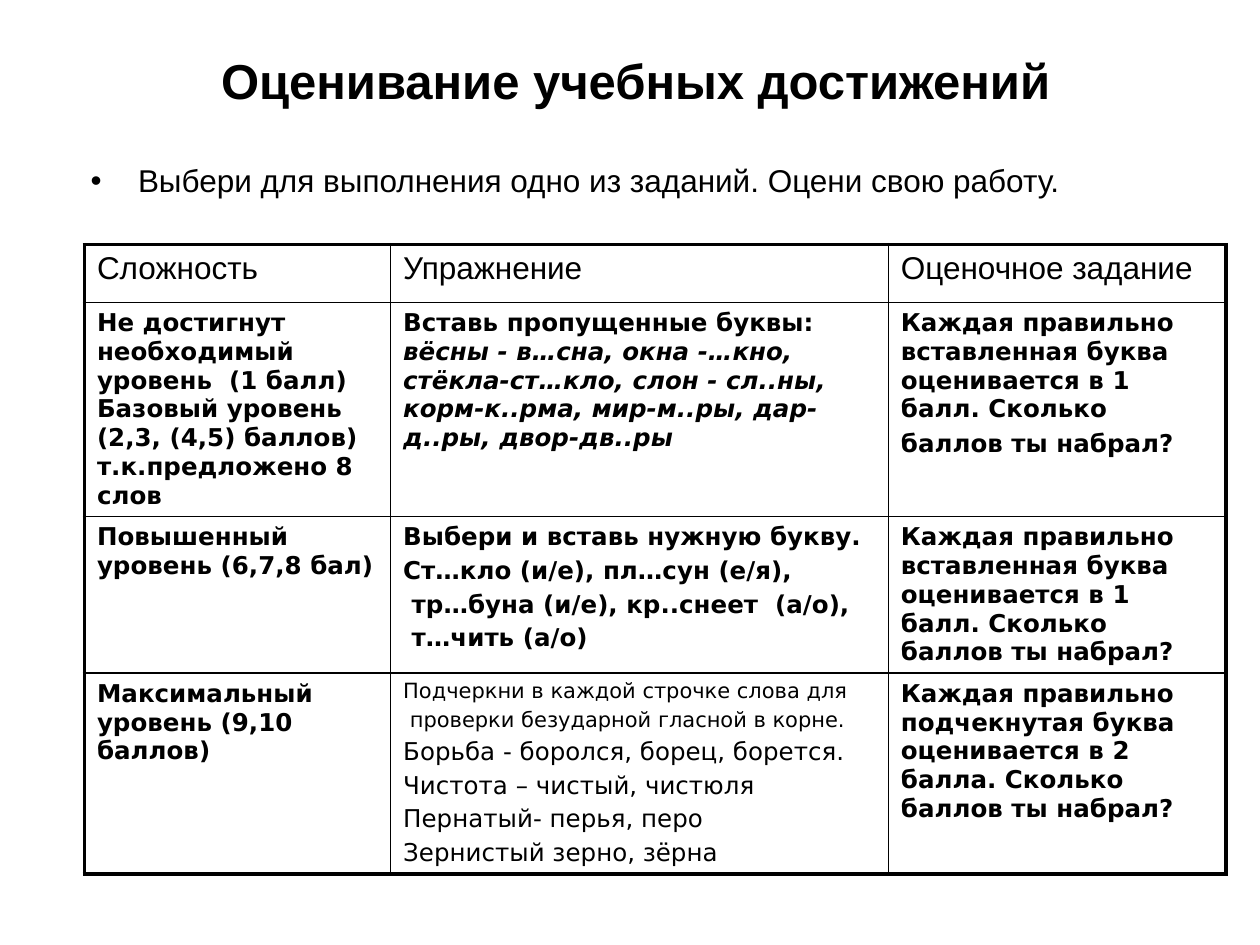
from lxml import etree
from pptx import Presentation
from pptx.dml.color import RGBColor
from pptx.enum.text import MSO_ANCHOR, MSO_AUTO_SIZE, PP_ALIGN
from pptx.oxml.ns import qn
from pptx.util import Inches, Pt

CENTER = PP_ALIGN.CENTER
MIDDLE = MSO_ANCHOR.MIDDLE
NO_AUTOFIT = MSO_AUTO_SIZE.NONE
BLACK = "000000"
OUTER, INNER = 2.25, 1

# style: font, size, bold, italic
STYLES = {
    "title": ("Arial", 28, True, False),
    "lead": ("Arial", 18, False, False),
    "bold": ("DejaVu Sans", 14, True, False),
    "example": ("DejaVu Sans", 14, True, True),
    "plain": ("DejaVu Sans", 14, False, False),
    "small": ("DejaVu Sans", 12, False, False),
    "gap": ("DejaVu Sans", 18, False, False),
}

TITLE = "Оценивание учебных достижений"
TASK = "Выбери для выполнения одно из заданий. Оцени свою работу."
SCORE = ("Каждая правильно вставленная буква оценивается в 1 балл. "
         "Сколько баллов ты набрал?")

# Each cell is a list of paragraphs, each paragraph a list of (text, style)
ROWS = [
    [[[(heading, "lead")]]
     for heading in ("Сложность", "Упражнение", "Оценочное задание")],
    [
        [[("Не достигнут необходимый уровень  (1 балл) Базовый уровень "
           "(2,3, (4,5) баллов) т.к.предложено 8 слов", "bold")]],
        [[("Вставь пропущенные буквы: ", "bold"),
          ("вёсны - в…сна, окна -…кно, стёкла-ст…кло, слон - сл..ны, "
           "корм-к..рма, мир-м..ры, дар-д..ры, двор-дв..ры", "example")]],
        [[(SCORE, "bold"), (" ", "gap")]],
    ],
    [
        [[("Повышенный уровень (6,7,8 бал)", "bold")]],
        [[("Выбери и вставь нужную букву.", "bold")],
         [("Ст…кло (и/е), пл…сун (е/я),", "bold")],
         [(" тр…буна (и/е), кр..снеет  (а/о),", "bold")],
         [(" т…чить (а/о)", "bold")]],
        [[(SCORE, "bold")]],
    ],
    [
        [[("Максимальный уровень (9,10 баллов)", "bold")]],
        [[("Подчеркни в каждой строчке слова для", "small")],
         [(" проверки безударной гласной в корне.", "small")],
         [("Борьба - боролся, борец, борется.", "plain")],
         [("Чистота – чистый, чистюля", "plain")],
         [("Пернатый- перья, перо", "plain")],
         [("Зернистый зерно, зёрна", "plain")]],
        [[("Каждая правильно подчекнутая буква оценивается в 2 балла. "
           "Сколько баллов ты набрал?", "bold")]],
    ],
]
COLUMN_WIDTHS = [2.43, 3.95, 2.68]
ROW_HEIGHTS = [0.46, 1.7, 1.24, 1.59]


def rgb(color):
    return RGBColor.from_string(color)


def format_font(font, style):
    font.name, size, font.bold, font.italic = STYLES[style]
    font.size = Pt(size)
    font.color.rgb = rgb(BLACK)


def fill_placeholder(shape, text, style, left, top, width, height):
    shape.left, shape.top = Inches(left), Inches(top)
    shape.width, shape.height = Inches(width), Inches(height)
    frame = shape.text_frame
    frame.text = text
    frame.auto_size = NO_AUTOFIT
    paragraph = frame.paragraphs[0]
    paragraph.space_before = Pt(0)
    format_font(paragraph.runs[0].font, style)
    return frame


def fill_cell(cell, paragraphs):
    frame = cell.text_frame
    for index, runs in enumerate(paragraphs):
        paragraph = frame.paragraphs[0] if index == 0 else frame.add_paragraph()
        size = STYLES[runs[0][1]][1]
        paragraph.space_before = Pt(0.2 * size if index else 0)
        for text, style in runs:
            run = paragraph.add_run()
            run.text = text
            format_font(run.font, style)


def set_borders(cell, widths):
    """Draw the cell's sides; widths are in points, keyed L, R, T, B."""
    properties = cell._tc.get_or_add_tcPr()
    for side, width in widths.items():
        line = etree.SubElement(properties, qn(f"a:ln{side}"), w=str(Pt(width)))
        fill = etree.SubElement(line, qn("a:solidFill"))
        etree.SubElement(fill, qn("a:srgbClr"), val=BLACK)


def add_levels_table(slide):
    last_row, last_column = len(ROWS) - 1, len(COLUMN_WIDTHS) - 1
    table = slide.shapes.add_table(
        len(ROWS), len(COLUMN_WIDTHS), Inches(0.67), Inches(1.94),
        Inches(sum(COLUMN_WIDTHS)), Inches(sum(ROW_HEIGHTS))).table
    table.first_row = table.horz_banding = False
    for column, width in zip(table.columns, COLUMN_WIDTHS):
        column.width = Inches(width)
    for row, height in zip(table.rows, ROW_HEIGHTS):
        row.height = Inches(height)
    for r, row in enumerate(ROWS):
        for c, paragraphs in enumerate(row):
            cell = table.cell(r, c)
            fill_cell(cell, paragraphs)
            set_borders(cell, {
                "L": OUTER if c == 0 else INNER,
                "R": OUTER if c == last_column else INNER,
                "T": OUTER if r == 0 else INNER,
                "B": OUTER if r == last_row else INNER,
            })
            cell.fill.background()


def main():
    presentation = Presentation()
    presentation.slide_width, presentation.slide_height = Inches(10), Inches(7.5)
    slide = presentation.slides.add_slide(presentation.slide_layouts[1])

    title = fill_placeholder(slide.shapes.title, TITLE, "title",
                             0.67, 0.36, 8.75, 0.55)
    title.vertical_anchor = MIDDLE
    title.paragraphs[0].alignment = CENTER
    fill_placeholder(slide.placeholders[1], TASK, "lead", 0.62, 1.23, 8.75, 5.35)
    add_levels_table(slide)

    presentation.save("out.pptx")


if __name__ == "__main__":
    main()
